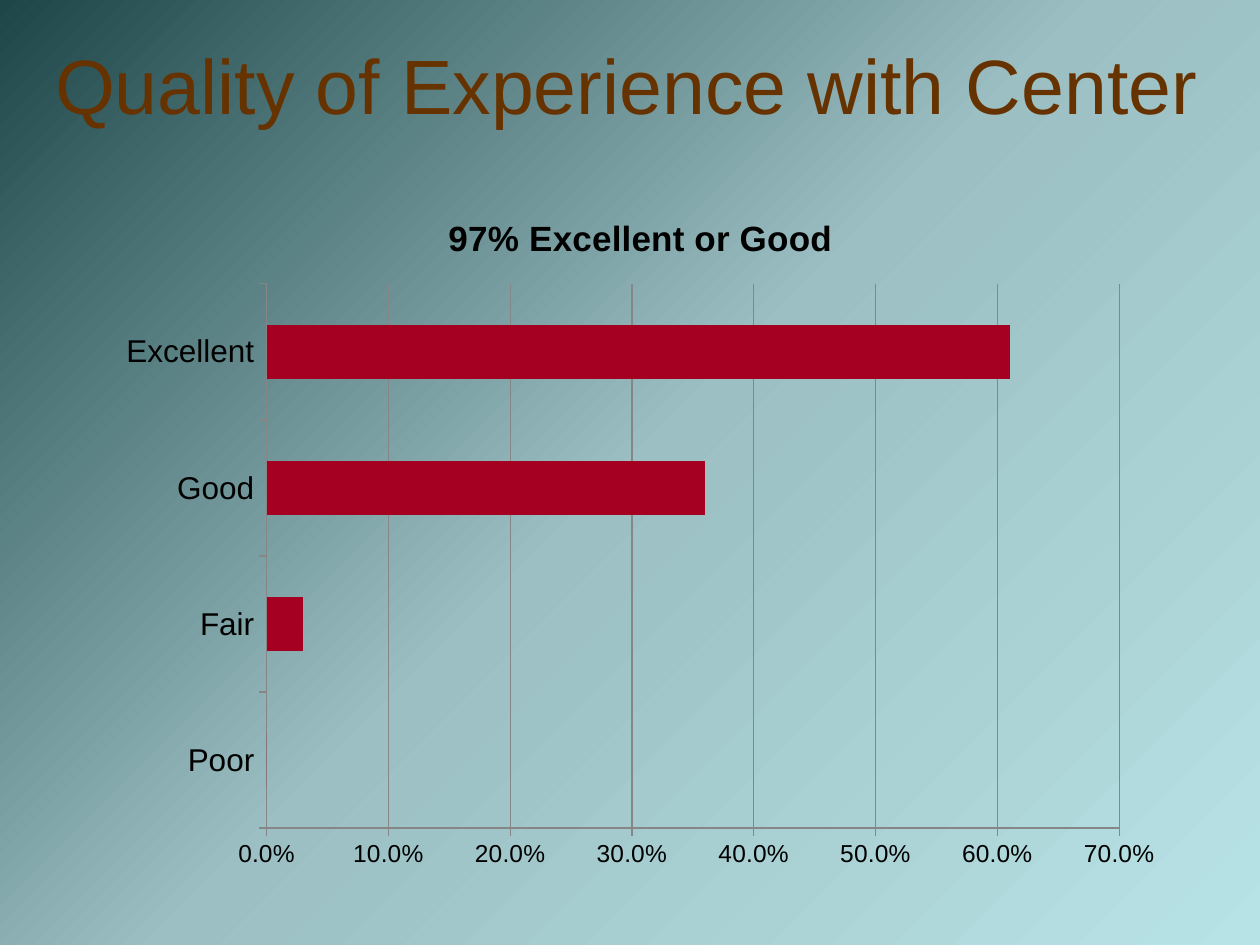
from copy import deepcopy

from pptx import Presentation
from pptx.chart.data import CategoryChartData
from pptx.dml.color import RGBColor
from pptx.enum.chart import XL_CHART_TYPE as ChartType, XL_TICK_MARK as TickMark
from pptx.enum.text import MSO_ANCHOR as Anchor, PP_ALIGN as Align
from pptx.oxml.ns import qn
from pptx.util import Emu, Pt

PX = 914400 / 126
FONT = "Arial"
BROWN = RGBColor(0x66, 0x33, 0x00)
BLACK = RGBColor(0x00, 0x00, 0x00)
CRIMSON = RGBColor(0xA5, 0x00, 0x21)
GRAY = RGBColor(0x86, 0x86, 0x86)
BACKDROP = [
    (0, RGBColor(0x1E, 0x46, 0x49)),
    (0.5, RGBColor(0x9B, 0xBF, 0xC2)),
    (1, RGBColor(0xB8, 0xE3, 0xE6)),
]
RATINGS = {"Poor": 0, "Fair": 0.03, "Good": 0.36, "Excellent": 0.61}


def px(*lengths):
    return [Emu(round(length * PX)) for length in lengths]


def style_font(font, size, color, bold=False):
    font.name = FONT
    font.size = Pt(size)
    font.bold = bold
    font.color.rgb = color


def paint_background(slide):
    fill = slide.background.fill
    fill.gradient()
    fill.gradient_angle = 315
    stop_list = slide.element.find(".//" + qn("a:gsLst"))
    stop_list.insert(1, deepcopy(stop_list[0]))
    for stop, (position, color) in zip(fill.gradient_stops, BACKDROP):
        stop.position = position
        stop.color.rgb = color


def add_heading(slide, text, box):
    frame = slide.shapes.add_textbox(*px(*box)).text_frame
    frame.word_wrap = True
    frame.vertical_anchor = Anchor.MIDDLE
    frame.margin_left, frame.margin_right = px(7, 13)
    frame.margin_top, frame.margin_bottom = px(8, 8)
    frame.text = text
    heading = frame.paragraphs[0]
    heading.alignment = Align.CENTER
    style_font(heading.runs[0].font, 44, BROWN)


def style_axis(axis, size):
    axis.major_tick_mark = TickMark.OUTSIDE
    axis.minor_tick_mark = TickMark.NONE
    axis.format.line.color.rgb = GRAY
    axis.format.line.width = Pt(0.75)
    style_font(axis.tick_labels.font, size, BLACK)


def add_ratings_chart(slide, title, ratings, box):
    data = CategoryChartData(number_format="0.0%")
    data.categories = list(ratings)
    data.add_series("Series 1", list(ratings.values()))
    chart = slide.shapes.add_chart(ChartType.BAR_CLUSTERED, *px(*box), data).chart
    style_font(chart.font, 10, BLACK)
    chart.has_legend = False
    chart.has_title = True
    chart.chart_title.include_in_layout = False
    caption = chart.chart_title.text_frame
    caption.text = title
    style_font(caption.paragraphs[0].runs[0].font, 20, BLACK, bold=True)

    style_axis(chart.category_axis, 18)
    percent_axis = chart.value_axis
    style_axis(percent_axis, 14)
    percent_axis.minimum_scale = 0
    percent_axis.maximum_scale = 0.7
    percent_axis.major_unit = 0.1
    percent_axis.tick_labels.number_format = "0.0%"
    percent_axis.tick_labels.number_format_is_linked = False
    percent_axis.has_major_gridlines = True
    gridline = percent_axis.major_gridlines.format.line
    gridline.color.rgb = GRAY
    gridline.width = Pt(0.75)

    bars = chart.plots[0]
    bars.gap_width = 150
    bars.vary_by_categories = False
    bar_fill = bars.series[0].format.fill
    bar_fill.solid()
    bar_fill.fore_color.rgb = CRIMSON


def main():
    deck = Presentation()
    deck.slide_width, deck.slide_height = px(1260, 945)
    slide = deck.slides.add_slide(deck.slide_layouts[6])
    paint_background(slide)
    add_heading(slide, "Quality of Experience with Center", (0, 10, 1260, 147))
    add_ratings_chart(slide, "97% Excellent or Good", RATINGS, (105, 189, 1071, 693))
    deck.save("out.pptx")


if __name__ == "__main__":
    main()
